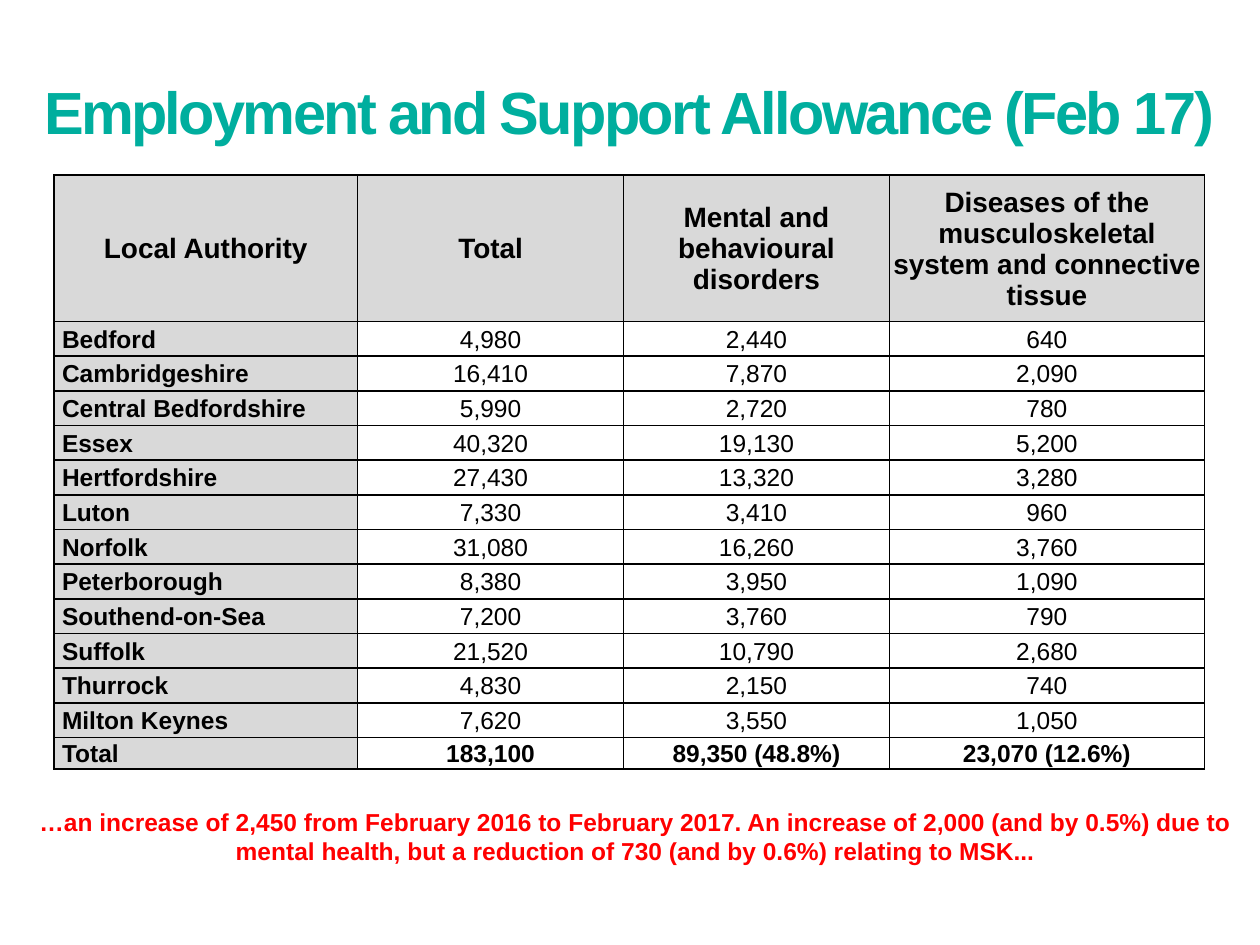
from lxml.etree import SubElement
from pptx import Presentation
from pptx.dml.color import RGBColor
from pptx.enum.text import MSO_ANCHOR, PP_ALIGN
from pptx.oxml.ns import qn
from pptx.util import Cm, Pt

COLOURS = {"title": "00AE9E", "text": "000000", "note": "FF0000",
           "header": "D9D9D9", "border": "000000"}

HEADINGS = ("Local Authority", "Total", "Mental and behavioural disorders",
            "Diseases of the musculoskeletal system and connective tissue")
CLAIMANTS = [
    ("Bedford", "4,980", "2,440", "640"),
    ("Cambridgeshire", "16,410", "7,870", "2,090"),
    ("Central Bedfordshire", "5,990", "2,720", "780"),
    ("Essex", "40,320", "19,130", "5,200"),
    ("Hertfordshire", "27,430", "13,320", "3,280"),
    ("Luton", "7,330", "3,410", "960"),
    ("Norfolk", "31,080", "16,260", "3,760"),
    ("Peterborough", "8,380", "3,950", "1,090"),
    ("Southend-on-Sea", "7,200", "3,760", "790"),
    ("Suffolk", "21,520", "10,790", "2,680"),
    ("Thurrock", "4,830", "2,150", "740"),
    ("Milton Keynes", "7,620", "3,550", "1,050"),
]
TOTALS = ("Total", "183,100", "89,350 (48.8%)", "23,070 (12.6%)")


class SlideBuilder:
    """Holds the style and the current slide."""

    font_name = "Arial"
    cell_margin = 0.03
    name_indent = 0.16

    def __init__(self, page):
        self.page = page

    def style(self, para, size, colour, bold=True, align=PP_ALIGN.LEFT):
        para.alignment = align
        font = para.font
        font.name, font.size, font.bold = self.font_name, Pt(size), bold
        font.color.rgb = RGBColor.from_string(COLOURS[colour])

    def text(self, text, left, top, width, height, size, colour,
             align=PP_ALIGN.LEFT, inset=(0.25, 0.13), spacing=None):
        box = self.page.shapes.add_textbox(Cm(left), Cm(top), Cm(width), Cm(height))
        frame = box.text_frame
        frame.word_wrap = True
        frame.margin_left = frame.margin_right = Cm(inset[0])
        frame.margin_top = frame.margin_bottom = Cm(inset[1])
        para = frame.paragraphs[0]
        span = para.add_run()
        span.text = text
        self.style(para, size, colour, align=align)
        if spacing is not None:
            span._r.get_or_add_rPr().set("spc", str(int(spacing * 100)))

    def borders(self, cell):
        properties = cell._tc.get_or_add_tcPr()
        for side in ("a:lnL", "a:lnR", "a:lnT", "a:lnB"):
            line = SubElement(properties, qn(side), w=str(Pt(1)))
            fill = SubElement(line, qn("a:solidFill"))
            SubElement(fill, qn("a:srgbClr"), val=COLOURS["border"])

    def cell(self, cell, text, size, bold, shaded, is_name):
        cell.text = text
        cell.vertical_anchor = MSO_ANCHOR.MIDDLE
        cell.margin_left = Cm(self.name_indent if is_name else self.cell_margin)
        cell.margin_right = cell.margin_top = Cm(self.cell_margin)
        cell.margin_bottom = 0
        align = PP_ALIGN.LEFT if is_name else PP_ALIGN.CENTER
        self.style(cell.text_frame.paragraphs[0], size, "text", bold, align)
        self.borders(cell)
        if shaded:
            cell.fill.solid()
            cell.fill.fore_color.rgb = RGBColor.from_string(COLOURS["header"])
        else:
            cell.fill.background()

    def table(self, rows, left, top, widths, heights):
        table = self.page.shapes.add_table(
            len(rows), len(widths), Cm(left), Cm(top),
            Cm(sum(widths)), Cm(sum(heights))).table
        table.first_row = table.horz_banding = False
        for column, width in zip(table.columns, widths):
            column.width = Cm(width)
        last = len(rows) - 1
        for r, (values, height) in enumerate(zip(rows, heights)):
            table.rows[r].height = Cm(height)
            for c, value in enumerate(values):
                self.cell(table.cell(r, c), value, size=14 if r else 16,
                          bold=r in (0, last) or c == 0,
                          shaded=r == 0 or c == 0, is_name=r > 0 and c == 0)


def main():
    deck = Presentation()
    deck.slide_width, deck.slide_height = Cm(25.4), Cm(19.05)
    builder = SlideBuilder(deck.slides.add_slide(deck.slide_layouts[6]))

    # Title
    builder.text("Employment and Support Allowance (Feb 17)", 0.89, 1.52, 24, 1.8,
                 34, "title", inset=(0, 0), spacing=-1.5)

    # Claimants by local authority
    builder.table([HEADINGS, *CLAIMANTS, TOTALS], 1.09, 3.53,
                  widths=[6.12, 5.36, 5.36, 6.35],
                  heights=[2.95] + [0.7] * len(CLAIMANTS) + [0.63])

    # Change over the year
    builder.text("…an increase of 2,450 from February 2016 to February 2017. "
                 "An increase of 2,000 (and by 0.5%) due to mental health, "
                 "but a reduction of 730 (and by 0.6%) relating to MSK...",
                 0.51, 16.13, 24.61, 1.45, 14, "note", align=PP_ALIGN.CENTER)

    deck.save("out.pptx")


if __name__ == "__main__":
    main()
